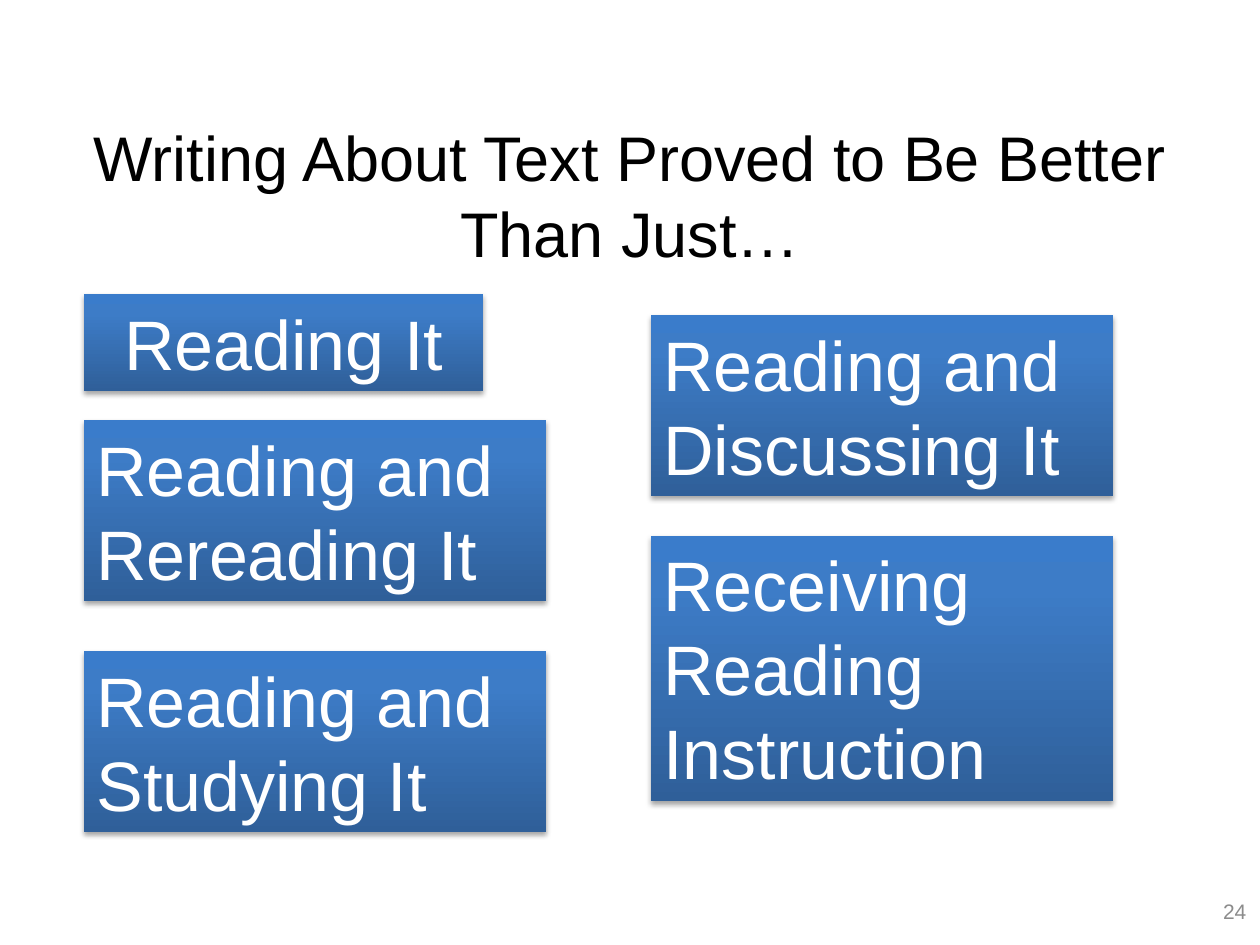
from dataclasses import dataclass

from pptx import Presentation
from pptx.dml.color import RGBColor
from pptx.enum.shapes import MSO_SHAPE
from pptx.enum.text import MSO_ANCHOR as Anchor, MSO_AUTO_SIZE as AutoSize, PP_ALIGN as Align
from pptx.oxml import parse_xml
from pptx.oxml.ns import nsdecls
from pptx.util import Inches, Pt


@dataclass(frozen=True)
class Theme:
    font: str = "Arial"
    title_size: int = 36
    card_size: int = 40
    number_size: int = 12
    title_color: str = "000000"
    card_color: str = "FFFFFF"
    number_color: str = "8C8C8C"
    shadow_color: str = "000000"
    gradient: tuple = ((0, "2F5F99"), (80, "3D7CC7"), (100, "3A7CCB"))


@dataclass(frozen=True)
class Card:
    text: str
    column: int
    row: int
    lines: int = 2
    columns: int = 22
    align: Align = Align.LEFT


THEME = Theme()
WIDTH, HEIGHT = Inches(10), Inches(7.5)
COLUMN, ROW = WIDTH // 60, HEIGHT // 90
LINE_HEIGHT, CARD_PADDING = Inches(0.67), Inches(0.1)

CARDS = (
    Card("Reading It", 4, 28, lines=1, columns=19, align=Align.CENTER),
    Card("Reading and Rereading It", 4, 40),
    Card("Reading and Studying It", 4, 62),
    Card("Reading and Discussing It", 31, 30),
    Card("Receiving Reading Instruction", 31, 51, lines=3),
)


def write(box, text: str, size: int, color: str, align: Align, anchor: Anchor) -> None:
    frame = box.text_frame
    frame.word_wrap = True
    frame.vertical_anchor = anchor
    para = frame.paragraphs[0]
    para.alignment = align
    span = para.add_run()
    span.text = text
    span.font.name = THEME.font
    span.font.size = Pt(size)
    span.font.color.rgb = RGBColor.from_string(color)


def paint(box) -> None:
    stops = "".join(
        f'<a:gs pos="{share * 1000}"><a:srgbClr val="{color}"/></a:gs>'
        for share, color in THEME.gradient
    )
    properties = box._element.spPr
    properties.insert(2, parse_xml(
        f'<a:gradFill {nsdecls("a")} rotWithShape="1"><a:gsLst>{stops}</a:gsLst>'
        '<a:lin ang="16200000" scaled="0"/></a:gradFill>'
    ))
    box.line.fill.background()
    box.shadow.inherit = False
    properties[-1].append(parse_xml(
        f'<a:outerShdw {nsdecls("a")} blurRad="{Pt(3.1)}" dist="{Pt(1.8)}" dir="5400000" '
        f'rotWithShape="0"><a:srgbClr val="{THEME.shadow_color}"><a:alpha val="35000"/>'
        '</a:srgbClr></a:outerShdw>'
    ))


def draw_card(page, card: Card) -> None:
    box = page.shapes.add_shape(
        MSO_SHAPE.RECTANGLE, card.column * COLUMN, card.row * ROW,
        card.columns * COLUMN, card.lines * LINE_HEIGHT + CARD_PADDING,
    )
    paint(box)
    write(box, card.text, THEME.card_size, THEME.card_color, card.align, Anchor.TOP)
    box.text_frame.auto_size = AutoSize.SHAPE_TO_FIT_TEXT


def main() -> None:
    deck = Presentation()
    deck.slide_width, deck.slide_height = WIDTH, HEIGHT
    page = deck.slides.add_slide(deck.slide_layouts[6])

    title = page.shapes.add_textbox(3 * COLUMN, 11 * ROW, 54 * COLUMN, 15 * ROW)
    write(title, "Writing About Text Proved to Be Better Than Just…",
          THEME.title_size, THEME.title_color, Align.CENTER, Anchor.MIDDLE)

    for card in CARDS:
        draw_card(page, card)

    number = page.shapes.add_textbox(54 * COLUMN, 84 * ROW, Inches(0.99), Inches(0.47))
    write(number, "24", THEME.number_size, THEME.number_color, Align.RIGHT, Anchor.MIDDLE)

    deck.save("out.pptx")


if __name__ == "__main__":
    main()
